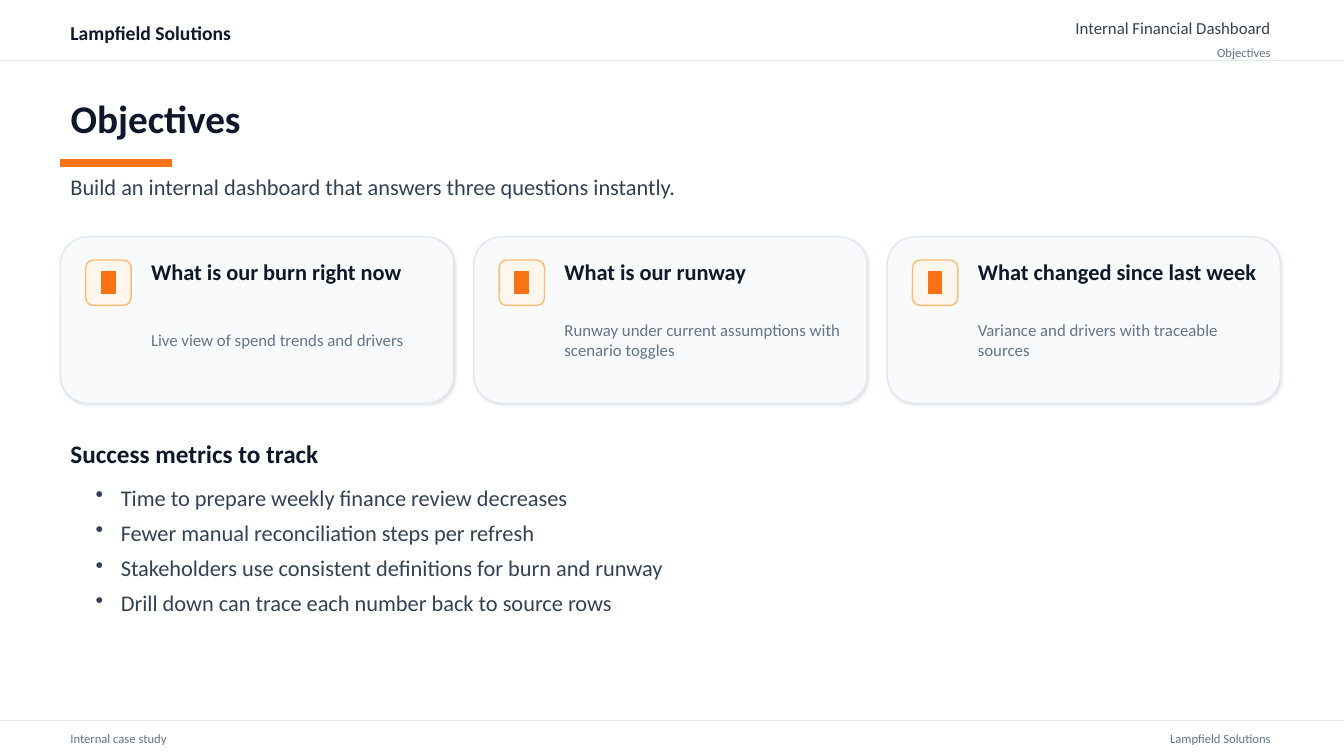
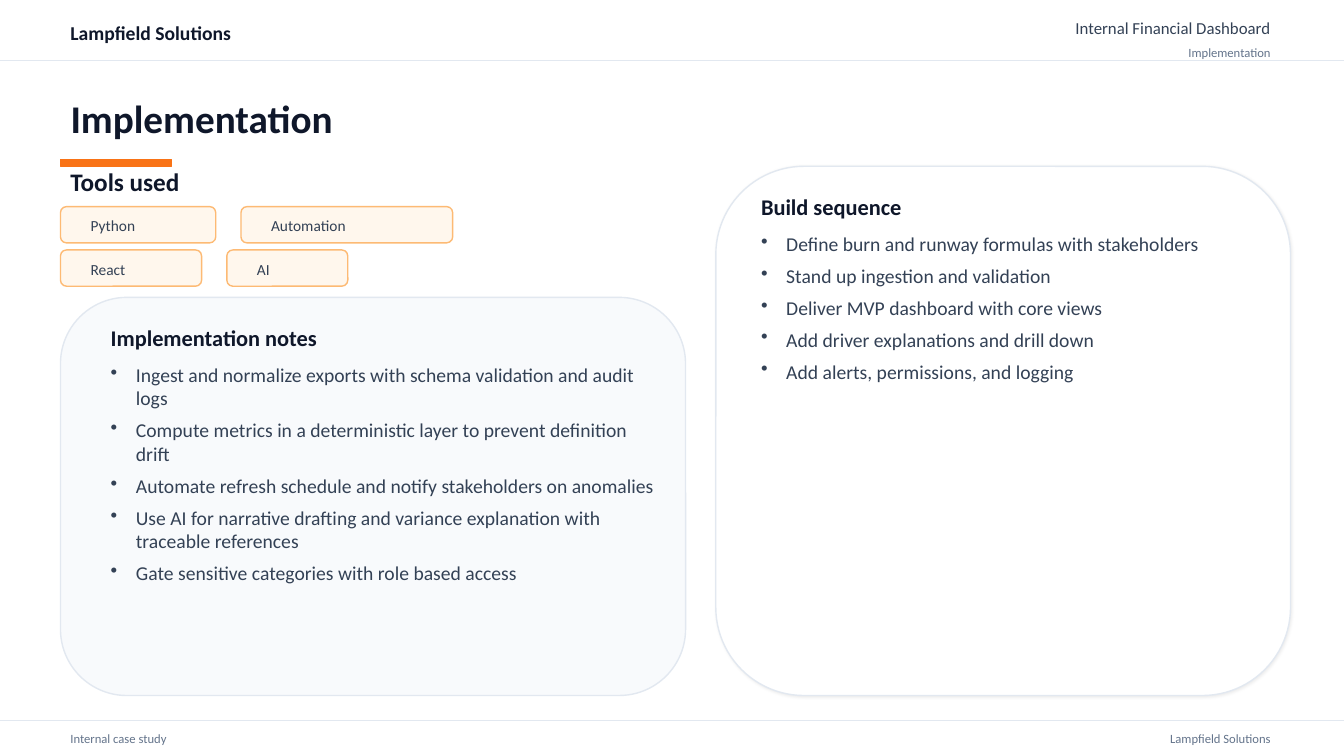
"""Builds the objectives and implementation slides of the dashboard case study."""
from dataclasses import dataclass

from lxml import etree
from pptx import Presentation
from pptx import util as u
from pptx.dml.color import RGBColor
from pptx.enum import shapes as kinds, text as t
from pptx.oxml import ns

CELL = 0.1
COLS, ROWS = 133.3, 75
LEFT, RIGHT, HALF = 6, 71, 60
FONT = "Calibri"
INK, BODY, MUTED = "0F172A", "334155", "64748B"
ACCENT, TINT, TINT_EDGE = "F97316", "FFF7ED", "FDBA74"
PANEL, WHITE, RULE = "F8FAFC", "FFFFFF", "E2E8F0"
COMPANY = "Lampfield Solutions"


@dataclass(frozen=True)
class Box:
    x: float
    y: float
    w: float
    h: float

    def emu(self) -> list[int]:
        return [cells(v) for v in (self.x, self.y, self.w, self.h)]

    def inner(self, dx: float, dy: float, w: float, h: float) -> "Box":
        return Box(self.x + dx, self.y + dy, w, h)

    def centred(self, w: float, h: float) -> "Box":
        return self.inner((self.w - w) / 2, (self.h - h) / 2, w, h)


@dataclass(frozen=True)
class Question:
    heading: str
    answer: str


@dataclass(frozen=True)
class Panel:
    box: Box
    inset: float
    text_w: float
    fill: str
    shadow: int
    heading: str
    points: list[str]


QUESTIONS = [
    Question("What is our burn right now", "Live view of spend trends and drivers"),
    Question("What is our runway", "Runway under current assumptions with scenario toggles"),
    Question("What changed since last week", "Variance and drivers with traceable sources"),
]
METRICS = [
    "Time to prepare weekly finance review decreases",
    "Fewer manual reconciliation steps per refresh",
    "Stakeholders use consistent definitions for burn and runway",
    "Drill down can trace each number back to source rows",
]
TOOL_ROWS = [["Python", "Automation"], ["React", "AI"]]
PANELS = [
    Panel(Box(LEFT, 29.5, 62, 39.5), 4, 56, PANEL, 0, "Implementation notes", [
        "Ingest and normalize exports with schema validation and audit logs",
        "Compute metrics in a deterministic layer to prevent definition drift",
        "Automate refresh schedule and notify stakeholders on anomalies",
        "Use AI for narrative drafting and variance explanation with traceable references",
        "Gate sensitive categories with role based access",
    ]),
    Panel(Box(RIGHT, 16.5, 57, 52.5), 3.5, 51, WHITE, 8, "Build sequence", [
        "Define burn and runway formulas with stakeholders",
        "Stand up ingestion and validation",
        "Deliver MVP dashboard with core views",
        "Add driver explanations and drill down",
        "Add alerts, permissions, and logging",
    ]),
]


def cells(count: float) -> int:
    return u.Inches(count * CELL)


def rgb(value: str) -> RGBColor:
    return RGBColor.from_string(value)


def write(frame, *lines: str, size: float, color: str = BODY, bold: bool = False,
          right: bool = False, bullets: bool = False) -> None:
    frame.word_wrap = True
    frame.auto_size = t.MSO_AUTO_SIZE.NONE
    frame.vertical_anchor = t.MSO_ANCHOR.TOP if bullets else t.MSO_ANCHOR.MIDDLE
    for index, line in enumerate(lines):
        para = frame.add_paragraph() if index else frame.paragraphs[0]
        para.alignment = t.PP_ALIGN.RIGHT if right else t.PP_ALIGN.LEFT
        run = para.add_run()
        run.text = line
        run.font.name, run.font.size, run.font.bold = FONT, u.Pt(size), bold
        run.font.color.rgb = rgb(color)
        if bullets:
            para.space_after = u.Pt(6)
            props = para._p.get_or_add_pPr()
            props.set("marL", str(u.Inches(0.25)))
            props.set("indent", str(-u.Inches(0.25)))
            etree.SubElement(props, ns.qn("a:buChar")).set("char", "•")


def put_text(slide, box: Box, *lines: str, **style) -> None:
    write(slide.shapes.add_textbox(*box.emu()).text_frame, *lines, **style)


def put_shape(slide, box: Box, fill: str, edge: str, rounded: bool = True,
              shadow: int = 0) -> None:
    preset = kinds.MSO_SHAPE.ROUNDED_RECTANGLE if rounded else kinds.MSO_SHAPE.RECTANGLE
    shape = slide.shapes.add_shape(preset, *box.emu())
    shape.fill.solid()
    shape.fill.fore_color.rgb = rgb(fill)
    shape.line.color.rgb = rgb(edge)
    shape.line.width = u.Pt(1)
    shape.shadow.inherit = False
    if shadow:
        effects = shape.element.spPr.find(ns.qn("a:effectLst"))
        cast = etree.SubElement(effects, ns.qn("a:outerShdw"), blurRad=str(u.Pt(2)),
                                dist=str(u.Pt(1)), dir=str(45 * 60000), algn="bl",
                                rotWithShape="0")
        tone = etree.SubElement(cast, ns.qn("a:srgbClr"), val="000000")
        etree.SubElement(tone, ns.qn("a:alpha"), val=str(shadow * 1000))


def put_rule(slide, row: float) -> None:
    rule = slide.shapes.add_connector(kinds.MSO_CONNECTOR.STRAIGHT,
                                      0, cells(row), cells(COLS), cells(row))
    rule.line.color.rgb = rgb(RULE)
    rule.line.width = u.Pt(1)
    etree.SubElement(rule.element.spPr, ns.qn("a:effectLst"))


def start_slide(deck, topic: str):
    slide = deck.slides.add_slide(deck.slide_layouts[5])
    title = slide.shapes.title
    title.left, title.top, title.width, title.height = Box(LEFT, 9.5, 122, 4.4).emu()
    write(title.text_frame, topic, size=28, color=INK, bold=True)
    put_rule(slide, 6)
    put_text(slide, Box(LEFT, 1.7, HALF, 3), COMPANY, size=14, color=INK, bold=True)
    put_text(slide, Box(RIGHT, 1.7, 56, 2.2), "Internal Financial Dashboard",
             size=12, right=True)
    put_text(slide, Box(RIGHT, 4.2, 56, 2), topic, size=9, color=MUTED, right=True)
    put_shape(slide, Box(LEFT, 15.8, 11, 0.7), ACCENT, ACCENT, rounded=False)
    put_rule(slide, 71.5)
    put_text(slide, Box(LEFT, 72.3, HALF, 2), "Internal case study", size=9, color=MUTED)
    put_text(slide, Box(RIGHT, 72.3, 56, 2), COMPANY, size=9, color=MUTED, right=True)
    return slide


def put_question(slide, card: Box, question: Question) -> None:
    icon = card.inner(2.5, 2.3, 4.5, 4.5)
    put_shape(slide, card, PANEL, RULE, shadow=10)
    put_shape(slide, icon, TINT, TINT_EDGE)
    put_shape(slide, icon.centred(1.3, 2.2), ACCENT, ACCENT, rounded=False)
    put_text(slide, card.inner(8, 1.7, 30, 3.5), question.heading,
             size=16, color=INK, bold=True)
    put_text(slide, card.inner(8, 5.7, 30, 9), question.answer, size=12, color=MUTED)


def put_tools(slide, row: float, tools: list[str]) -> None:
    left = LEFT
    for tool in tools:
        chip = Box(left, row, max(12, 7 + 1.4 * len(tool)), 3.6)
        put_shape(slide, chip, TINT, TINT_EDGE)
        put_text(slide, chip.inner(2, 0.8, chip.w - 3, 2.2), tool, size=11)
        left += chip.w + 2.5


def put_panel(slide, panel: Panel) -> None:
    put_shape(slide, panel.box, panel.fill, RULE, shadow=panel.shadow)
    put_text(slide, panel.box.inner(panel.inset, 2.5, panel.text_w - 1, 3), panel.heading,
             size=16, color=INK, bold=True)
    put_text(slide, panel.box.inner(panel.inset, 6, panel.text_w, 15.4), *panel.points,
             size=14, bullets=True)


def build_objectives(deck) -> None:
    slide = start_slide(deck, "Objectives")
    put_text(slide, Box(LEFT, 16.5, 122, 4),
             "Build an internal dashboard that answers three questions instantly.", size=16)
    for index, question in enumerate(QUESTIONS):
        put_question(slide, Box(LEFT + 41 * index, 23.5, 39, 16.5), question)
    put_text(slide, Box(LEFT, 43.5, 122, 3), "Success metrics to track",
             size=18, color=INK, bold=True)
    put_text(slide, Box(8.5, 47.5, 120, 14.8), *METRICS, size=16, bullets=True)


def build_implementation(deck) -> None:
    slide = start_slide(deck, "Implementation")
    put_text(slide, Box(LEFT, 16.5, HALF, 3), "Tools used", size=18, color=INK, bold=True)
    for index, tools in enumerate(TOOL_ROWS):
        put_tools(slide, 20.5 + 4.3 * index, tools)
    for panel in PANELS:
        put_panel(slide, panel)


def main() -> None:
    deck = Presentation()
    deck.slide_width, deck.slide_height = cells(COLS), cells(ROWS)
    build_objectives(deck)
    build_implementation(deck)
    deck.save("out.pptx")


if __name__ == "__main__":
    main()
